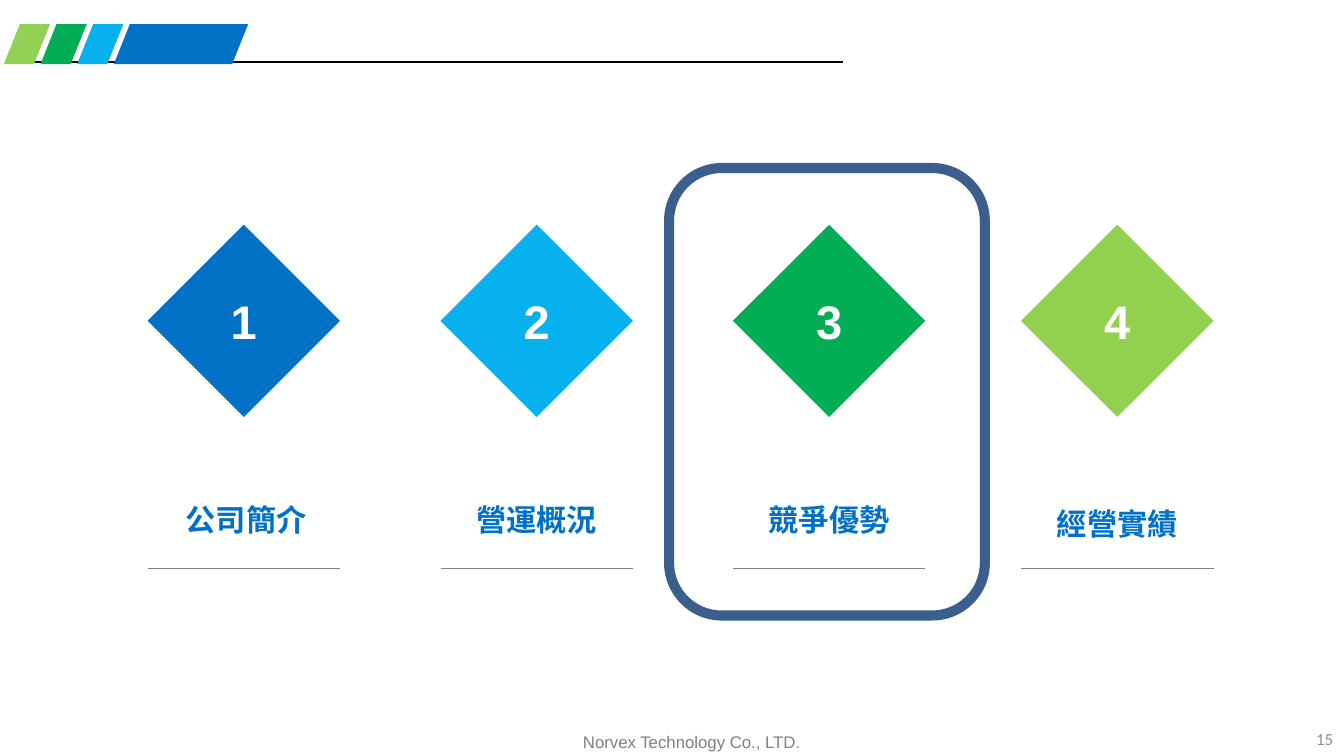
import pptx
import pptx.dml.color
import pptx.enum.shapes
import pptx.enum.text
import pptx.oxml.ns
import pptx.util
from lxml import etree

Cm = pptx.util.Cm
RGBColor = pptx.dml.color.RGBColor
MSO_SHAPE = pptx.enum.shapes.MSO_SHAPE
MSO_ANCHOR = pptx.enum.text.MSO_ANCHOR
MSO_AUTO_SIZE = pptx.enum.text.MSO_AUTO_SIZE
PP_ALIGN = pptx.enum.text.PP_ALIGN

BLUE = RGBColor(0x00, 0x71, 0xC5)
SKY = RGBColor(0x06, 0xB1, 0xEE)
GREEN = RGBColor(0x03, 0xAD, 0x55)
STRIPE_LIME = RGBColor(0x93, 0xD1, 0x54)
LIME = RGBColor(0x92, 0xD0, 0x50)
FRAME_BLUE = RGBColor(0x3A, 0x5F, 0x8C)
GRAY = RGBColor(0x80, 0x80, 0x80)
PAGE_GRAY = RGBColor(0x8C, 0x8C, 0x8C)
WHITE = RGBColor(0xFF, 0xFF, 0xFF)
BLACK = RGBColor(0x00, 0x00, 0x00)

CJK_FONT = "Noto Sans CJK SC"
DIAMOND = 4.04  # width and height, cm

# number, label, colour, left edge, label shift right and down (cm)
CHAPTERS = [
    ("1", "公司簡介", BLUE, 3.1, 0.05, 0),
    ("2", "營運概況", SKY, 9.25, 0, 0),
    ("3", "競爭優勢", GREEN, 15.39, 0, 0),
    ("4", "經營實績", LIME, 21.44, 0, 0.07),
]


def add_rule(s, x1, x2, y, color):
    """Draw a thin horizontal line."""
    line = s.shapes.add_connector(
        pptx.enum.shapes.MSO_CONNECTOR.STRAIGHT, Cm(x1), Cm(y), Cm(x2), Cm(y))
    line.line.color.rgb = color
    line.line.width = pptx.util.Pt(0.75)
    etree.SubElement(line._element.spPr, pptx.oxml.ns.qn("a:effectLst"))


def add_filled(s, kind, box, color):
    sp = s.shapes.add_shape(kind, *map(Cm, box))
    sp.shadow.inherit = False
    sp.fill.solid()
    sp.fill.fore_color.rgb = color
    sp.line.fill.background()
    return sp


def write(tf, text, size, color, font, bold=False, align=PP_ALIGN.CENTER):
    p = tf.paragraphs[0]
    p.alignment = align
    r = p.add_run()
    r.text = text
    r.font.size = pptx.util.Pt(size)
    r.font.bold = bold
    r.font.color.rgb = color
    r.font.name = font
    ea = etree.SubElement(r.font._element, pptx.oxml.ns.qn("a:ea"))
    ea.set("typeface", font)
    return p


def add_text(s, box, *args, **kwargs):
    tf = s.shapes.add_textbox(*map(Cm, box)).text_frame
    return tf, write(tf, *args, **kwargs)


def add_header(s, left, top):
    add_rule(s, left + 0.1, left + 17.62, top + 0.79, BLACK)
    for i, color in enumerate([STRIPE_LIME, GREEN, SKY, BLUE]):
        width = 2.82 if color == BLUE else 0.97
        sp = add_filled(s, MSO_SHAPE.PARALLELOGRAM,
                        (left + 0.77 * i, top, width, 0.84), color)
        sp.adjustments[0] = 0.4


def add_chapter(s, left, top, number, label, color, dx, dy):
    sp = add_filled(s, MSO_SHAPE.DIAMOND, (left, top, DIAMOND, DIAMOND), color)
    tf = sp.text_frame
    tf.vertical_anchor = MSO_ANCHOR.MIDDLE
    write(tf, number, 28, WHITE, "Arial", bold=True)

    width = 3.07
    box = (left + (DIAMOND - width) / 2 + dx, top + 5.31 + dy, width, 1.27)
    tf, p = add_text(s, box, label, 18, BLUE, CJK_FONT, bold=True)
    tf.word_wrap = False
    tf.auto_size = MSO_AUTO_SIZE.SHAPE_TO_FIT_TEXT
    p.line_spacing = 1.5
    add_rule(s, left, left + DIAMOND, top + 7.22, GRAY)


def add_highlight(s, left, top, width, height):
    sp = s.shapes.add_shape(MSO_SHAPE.ROUNDED_RECTANGLE,
                            Cm(left), Cm(top), Cm(width), Cm(height))
    sp.shadow.inherit = False
    sp.fill.background()
    sp.line.color.rgb = FRAME_BLUE
    sp.line.width = pptx.util.Pt(6)


def add_footer(s, top):
    tf, p = add_text(s, (10.39, top + 0.1, 8.26, 0.71),
                     "Norvex Technology Co., LTD.", 10, GRAY, "Arial")
    tf.word_wrap = True
    tf, p = add_text(s, (27, top, 1.24, 0.74), "15", 10, PAGE_GRAY, "Calibri",
                     align=PP_ALIGN.RIGHT)
    tf.word_wrap = True
    tf.vertical_anchor = MSO_ANCHOR.MIDDLE


def main():
    prs = pptx.Presentation()
    prs.slide_width, prs.slide_height = Cm(28.22), Cm(15.88)
    s = prs.slides.add_slide(prs.slide_layouts[6])
    add_header(s, 0.08, 0.51)
    for number, label, color, left, dx, dy in CHAPTERS:
        add_chapter(s, left, 4.72, number, label, color, dx, dy)
    add_highlight(s, 14.05, 3.53, 6.63, 9.4)
    add_footer(s, 15.14)
    prs.save("out.pptx")


if __name__ == "__main__":
    main()
